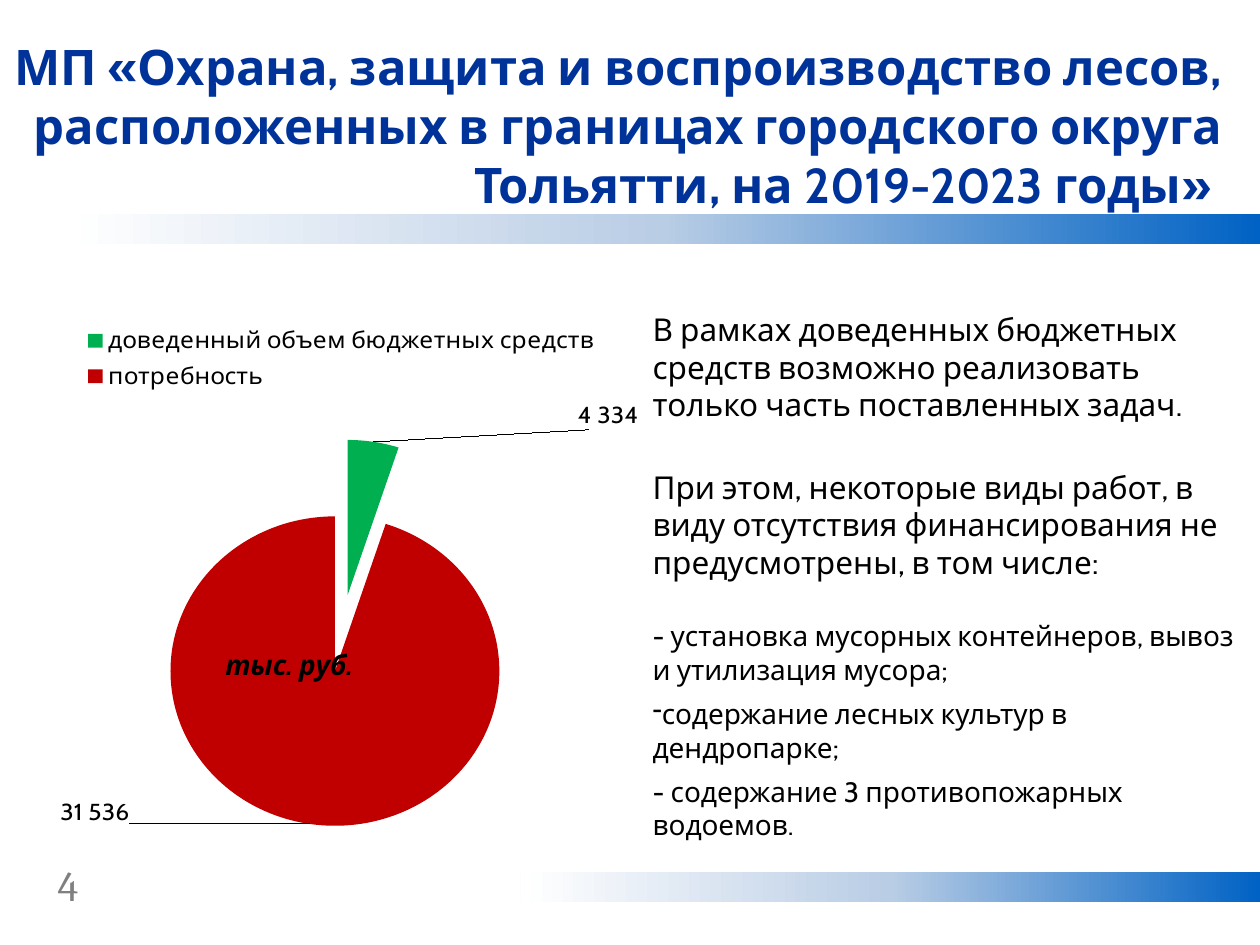
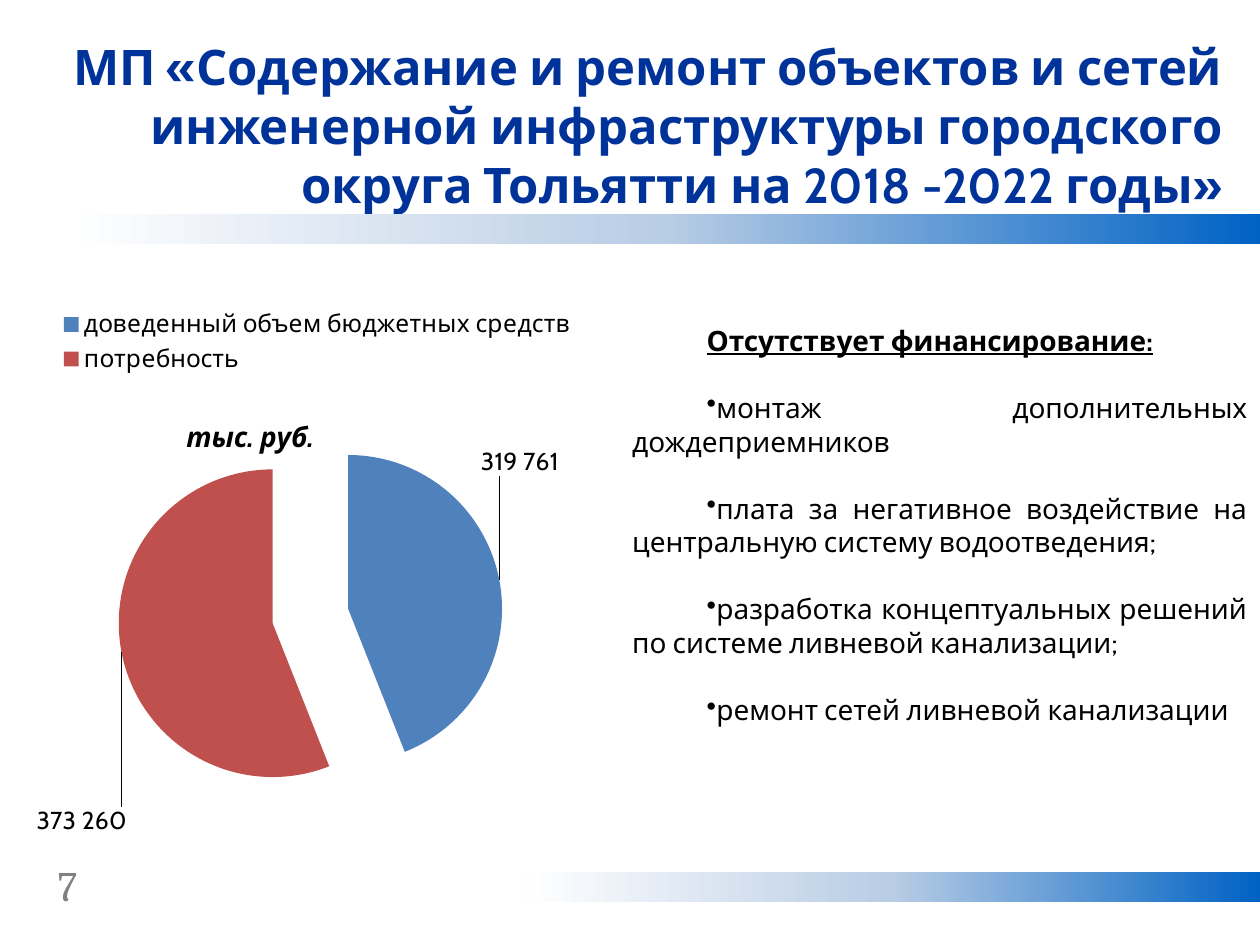
"""Build two budget slides, each with a pie chart and the work left unfunded."""
from copy import deepcopy

from lxml import etree
from pptx import Presentation
from pptx.chart.data import CategoryChartData
from pptx.dml.color import RGBColor
from pptx.enum.chart import XL_CHART_TYPE, XL_LABEL_POSITION, XL_LEGEND_POSITION
from pptx.enum.shapes import MSO_SHAPE
from pptx.enum.text import MSO_ANCHOR, MSO_AUTO_SIZE, PP_ALIGN
from pptx.oxml.ns import qn
from pptx.util import Pt

PIE = XL_CHART_TYPE.PIE
OUTSIDE_END = XL_LABEL_POSITION.OUTSIDE_END
LEGEND_TOP = XL_LEGEND_POSITION.TOP
RECTANGLE = MSO_SHAPE.RECTANGLE
TOP, MIDDLE = MSO_ANCHOR.TOP, MSO_ANCHOR.MIDDLE
NO_AUTOFIT = MSO_AUTO_SIZE.NONE
LEFT, RIGHT, JUSTIFY = PP_ALIGN.LEFT, PP_ALIGN.RIGHT, PP_ALIGN.JUSTIFY

COLORS = {
    "title": "003399", "text": "000000", "number": "808080",
    "band_dark": "0062C4", "band_middle": "B9CDE5", "band_light": "FFFFFF",
    "green": "00B050", "dark_red": "C00000", "blue": "4F81BD", "red": "C0504D",
}
FONT = "Cabin"
CATEGORIES = ["доведенный объем бюджетных средств ", "потребность"]
BANDS = [(36.7, 122.4, 683.3), (297.4, 498.2, 422.6)]
BAND_HEIGHT = 17.3
BAND_STOPS = [(0, "band_dark"), (0.5, "band_middle"), (1, "band_light")]

SLIDES = [
    {
        "number": "4",
        "title": "МП «Охрана, защита и воспроизводство лесов, расположенных в границах "
                 "городского округа Тольятти, на 2019-2023 годы» ",
        "chart": (25.2, 173.5, 339.8, 317.5),
        "plot": (0, 0.26, 1, 0.74),
        "legend": (0.07, 0.03, 0.86, 0.15),
        "points": [(5, "green", "4 334", (0.36, -0.01)),
                   (95, "dark_red", "31 536", (-0.3, -0.04))],
        "unit": (121.7, 366.5, 108, 26.6),
        "texts": [
            {"box": (365.8, 173.5, 354.2, 94.3), "anchor": TOP, "align": LEFT, "indent": 0,
             "paragraphs": [
                 ("В рамках доведенных бюджетных средств возможно реализовать "
                  "только часть поставленных задач.", 18, "", 0, 0)]},
            {"box": (365.8, 263.7, 354.2, 205.7), "anchor": TOP, "align": LEFT, "indent": 0,
             "paragraphs": [
                 ("При этом, некоторые виды работ, в виду отсутствия финансирования "
                  "не предусмотрены, в том числе:", 18, "", 0, 0),
                 ("- установка мусорных контейнеров, вывоз и утилизация мусора;",
                  16, "", 21.6, 6),
                 ("содержание лесных культур в дендропарке;", 16, "-", 0, 6),
                 ("- содержание 3 противопожарных водоемов.", 16, "", 0, 0)]},
        ],
    },
    {
        "number": "7",
        "title": "МП «Содержание и ремонт объектов и сетей инженерной инфраструктуры "
                 "городского округа Тольятти на 2018 -2022 годы»",
        "chart": (0, 167.8, 365.8, 323.3),
        "plot": (0.05, 0.23, 0.87, 0.68),
        "legend": (0.09, 0.02, 0.82, 0.13),
        "points": [(44, "blue", "319 761", (-0.04, -0.18)),
                   (56, "red", "373 260", (0.02, 0.27))],
        "unit": (99.4, 236.2, 96.5, 26.6),
        "texts": [
            {"box": (354.2, 180, 365.8, 239.8), "anchor": MIDDLE, "align": JUSTIFY,
             "indent": 42.5, "heading": True,
             "paragraphs": [
                 ("Отсутствует финансирование:", 16, "", 0, 0),
                 ("монтаж дополнительных дождеприемников", 16, "•", 19.2, 0),
                 ("плата за негативное воздействие на центральную систему "
                  "водоотведения;", 16, "•", 19.2, 0),
                 ("разработка концептуальных решений по системе ливневой "
                  "канализации;", 16, "•", 19.2, 0),
                 ("ремонт сетей ливневой канализации ", 16, "•", 19.2, 0)]},
        ],
    },
]


def style(font, size, color="text", name=FONT, bold=False, italic=False):
    font.size, font.name, font.bold, font.italic = Pt(size), name, bold, italic
    font.color.rgb = RGBColor.from_string(COLORS[color])


def set_layout(parent, index, **values):
    for old_layout in parent.findall(qn("c:layout")):
        parent.remove(old_layout)
    layout = etree.Element(qn("c:layout"))
    manual = etree.SubElement(layout, qn("c:manualLayout"))
    for tag, value in values.items():
        etree.SubElement(manual, qn(f"c:{tag}")).set("val", str(value))
    parent.insert(index, layout)


presentation = Presentation()
presentation.slide_width, presentation.slide_height = Pt(720), Pt(540)

for content in SLIDES:
    slide = presentation.slides.add_slide(presentation.slide_layouts[5])

    for left, top, width in BANDS:
        band = slide.shapes.add_shape(RECTANGLE, Pt(left), Pt(top), Pt(width), Pt(BAND_HEIGHT))
        band.shadow.inherit = False
        band.line.fill.background()
        band.fill.gradient()
        band.fill.gradient_angle = 180
        stop_list = band._element.find(".//" + qn("a:gsLst"))
        stop_list.insert(1, deepcopy(stop_list[0]))
        for stop, (position, color) in zip(band.fill.gradient_stops, BAND_STOPS):
            stop.position = position
            stop.color.rgb = RGBColor.from_string(COLORS[color])

    title = slide.shapes.title
    title.left, title.top, title.width, title.height = Pt(0), Pt(17.3), Pt(705.6), Pt(108.7)
    title.text_frame.text = content["title"]
    title.text_frame.word_wrap = True
    title.text_frame.auto_size = NO_AUTOFIT
    title.text_frame.vertical_anchor = TOP
    paragraph = title.text_frame.paragraphs[0]
    paragraph.alignment = RIGHT
    style(paragraph.font, 28, "title", bold=True)

    chart_data = CategoryChartData(number_format="0.0")
    chart_data.categories = CATEGORIES
    chart_data.add_series("Series 1", [point[0] for point in content["points"]])
    chart = slide.shapes.add_chart(PIE, *map(Pt, content["chart"]), chart_data).chart
    chart.has_title = False
    style(chart.font, 10, name="Calibri")
    x, y, w, h = content["plot"]
    set_layout(chart._chartSpace.find(".//" + qn("c:plotArea")), 0, layoutTarget="inner",
               xMode="edge", yMode="edge", x=x, y=y, w=w, h=h)
    chart.has_legend = True
    chart.legend.position = LEGEND_TOP
    chart.legend.include_in_layout = False
    style(chart.legend.font, 14)
    x, y, w, h = content["legend"]
    set_layout(chart.legend._element, 1, xMode="edge", yMode="edge", x=x, y=y, w=w, h=h)

    chart.plots[0].vary_by_categories = True
    series = chart.plots[0].series[0]
    labels = series.data_labels
    labels.show_value = False
    labels.show_percentage = True
    labels.number_format, labels.number_format_is_linked = "0.0", False
    labels.position = OUTSIDE_END
    style(labels.font, 14, bold=True)
    for index, (value, color, caption, offset) in enumerate(content["points"]):
        point = series.points[index]
        point.format.fill.solid()
        point.format.fill.fore_color.rgb = RGBColor.from_string(COLORS[color])
        label = point.data_label
        label.text_frame.text = caption
        style(label.text_frame.paragraphs[0].font, 14, bold=True)
        label.position = OUTSIDE_END
        set_layout(series._element.findall(".//" + qn("c:dLbl"))[index], 1,
                   x=offset[0], y=offset[1])
    explosion = etree.Element(qn("c:explosion"))
    explosion.set("val", "25")
    for data_point in series._element.findall(qn("c:dPt")):
        data_point.find(qn("c:spPr")).addprevious(deepcopy(explosion))
    series._element.find(qn("c:dPt")).addprevious(explosion)

    for text in content["texts"]:
        text_frame = slide.shapes.add_textbox(*map(Pt, text["box"])).text_frame
        text_frame.word_wrap = True
        text_frame.vertical_anchor = text["anchor"]
        for index, (words, size, bullet, before, after) in enumerate(text["paragraphs"]):
            paragraph = text_frame.paragraphs[0] if index == 0 else text_frame.add_paragraph()
            paragraph.text = words
            paragraph.alignment = text["align"]
            paragraph.space_before, paragraph.space_after = Pt(before), Pt(after)
            is_heading = index == 0 and text.get("heading", False)
            style(paragraph.font, size, bold=is_heading)
            paragraph.font.underline = is_heading
            properties = paragraph._p.get_or_add_pPr()
            properties.set("marL", "0")
            properties.set("indent", str(Pt(text["indent"])))
            if bullet:
                mark = etree.Element(qn("a:buChar"))
                mark.set("char", bullet)
                properties.find(qn("a:defRPr")).addprevious(mark)

    captions = [(content["unit"], "тыс. руб.", 16, "text", FONT, True),
                ((25.9, 487.4, 22.3, 36), content["number"], 24, "number", "Cambria", False)]
    for box, words, size, color, font_name, emphasis in captions:
        text_frame = slide.shapes.add_textbox(*map(Pt, box)).text_frame
        text_frame.word_wrap = True
        text_frame.text = words
        style(text_frame.paragraphs[0].font, size, color, font_name, emphasis, emphasis)

presentation.save("out.pptx")
